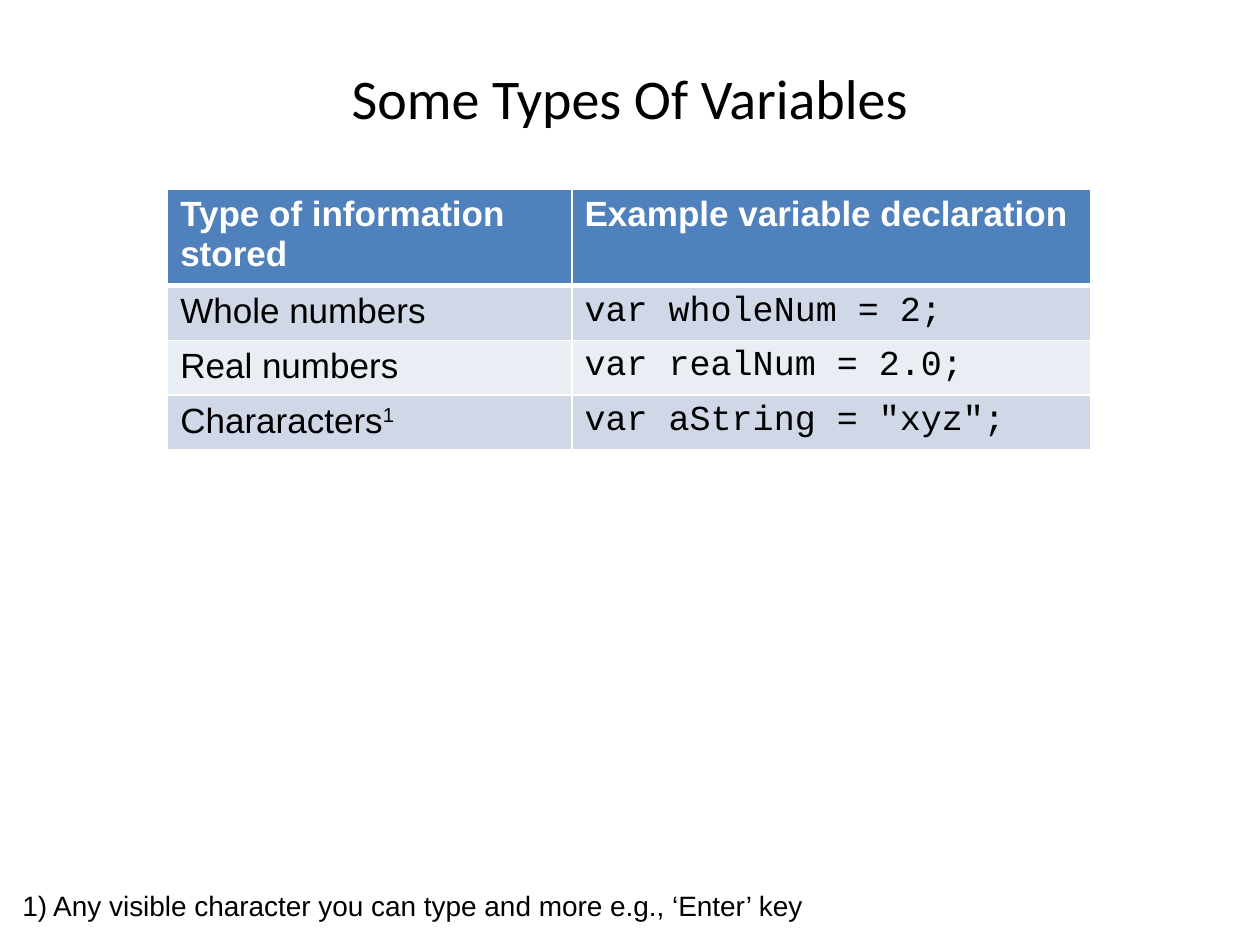
from dataclasses import dataclass

from lxml import etree
from pptx import Presentation
from pptx import util as u
from pptx.dml.color import RGBColor
from pptx.enum import text
from pptx.oxml import ns

BLACK = RGBColor(0x00, 0x00, 0x00)
WHITE = RGBColor(0xFF, 0xFF, 0xFF)
HEADER_BLUE = RGBColor(0x4F, 0x81, 0xBD)
BANDS = (RGBColor(0xD0, 0xD8, 0xE8), RGBColor(0xE9, 0xED, 0xF4))

TITLE = {"name": "Calibri", "size": u.Pt(32), "color": BLACK}
NOTE = {"name": "Arial", "size": u.Pt(16), "color": BLACK}
HEADER = {"name": "Arial", "size": u.Pt(20), "color": WHITE, "bold": True}
LABEL = {"name": "Arial", "size": u.Pt(20), "color": BLACK, "bold": False}
CODE = LABEL | {"name": "Courier New"}

COLUMN_WIDTHS = (u.Cm(8.15), u.Cm(10.46))
HEADER_HEIGHT, ROW_HEIGHT = u.Cm(1.8), u.Cm(1.05)
THIN, THICK = u.Pt(1), u.Pt(3)


@dataclass(frozen=True)
class VariableType:
    label: str
    example: str
    mark: str = ""


HEADINGS = ("Type of information stored", "Example variable declaration")
VARIABLE_TYPES = (
    VariableType("Whole numbers", "var wholeNum = 2;"),
    VariableType("Real numbers", "var realNum = 2.0;"),
    VariableType("Chararacters", 'var aString = "xyz";', mark="1"),
)


def add_span(para, words: str, style: dict):
    span = para.add_run()
    span.text = words
    for key, value in style.items():
        if key == "color":
            span.font.color.rgb = value
        else:
            setattr(span.font, key, value)
    return span


def add_text(page, left: float, top: float, width: float, height: float,
             words: str, style: dict, layout: dict, align=None) -> None:
    """Add a wrapped text box; the place is in centimetres."""
    box = page.shapes.add_textbox(*map(u.Cm, (left, top, width, height)))
    frame = box.text_frame
    for key, value in ({"word_wrap": True} | layout).items():
        setattr(frame, key, value)
    frame.paragraphs[0].alignment = align
    add_span(frame.paragraphs[0], words, style)


def format_cell(cell, fill: RGBColor, top: int, bottom: int) -> None:
    """Draw white borders, then fill; the schema wants them in that order."""
    properties = cell._tc.get_or_add_tcPr()
    widths = {"a:lnL": THIN, "a:lnR": THIN, "a:lnT": top, "a:lnB": bottom}
    for tag, width in widths.items():
        line = etree.SubElement(properties, ns.qn(tag), w=str(int(width)))
        solid = etree.SubElement(line, ns.qn("a:solidFill"))
        etree.SubElement(solid, ns.qn("a:srgbClr"), val=str(WHITE))
    cell.fill.solid()
    cell.fill.fore_color.rgb = fill


def add_variable_table(page) -> None:
    count = len(VARIABLE_TYPES)
    table = page.shapes.add_table(
        count + 1, len(HEADINGS), u.Cm(3.38), u.Cm(3.81),
        sum(COLUMN_WIDTHS), HEADER_HEIGHT + count * ROW_HEIGHT).table
    for column, width in zip(table.columns, COLUMN_WIDTHS):
        column.width = width
    for index, row in enumerate(table.rows):
        row.height = ROW_HEIGHT if index else HEADER_HEIGHT

    for column, heading in enumerate(HEADINGS):
        cell = table.cell(0, column)
        format_cell(cell, HEADER_BLUE, THIN, THICK)
        add_span(cell.text_frame.paragraphs[0], heading, HEADER)

    for index, kind in enumerate(VARIABLE_TYPES):
        label, example = (table.cell(index + 1, column) for column in range(2))
        for cell in (label, example):
            format_cell(cell, BANDS[index % 2], THIN if index else THICK, THIN)
        para = label.text_frame.paragraphs[0]
        add_span(para, kind.label, LABEL)
        if kind.mark:
            mark = add_span(para, kind.mark, LABEL)
            mark._r.get_or_add_rPr().set("baseline", "30000")
        add_span(example.text_frame.paragraphs[0], kind.example, CODE)


def main() -> None:
    deck = Presentation()
    deck.slide_width, deck.slide_height = u.Cm(25.4), u.Cm(19.05)
    page = deck.slides.add_slide(deck.slide_layouts[6])
    add_text(page, 1.27, 0.76, 22.86, 2.41, "Some Types Of Variables", TITLE,
             {"vertical_anchor": text.MSO_ANCHOR.MIDDLE}, text.PP_ALIGN.CENTER)
    add_variable_table(page)
    add_text(page, 0.2, 17.78, 24.97, 0.94,
             "1) Any visible character you can type and more e.g., ‘Enter’ key",
             NOTE, {"auto_size": text.MSO_AUTO_SIZE.SHAPE_TO_FIT_TEXT})
    deck.save("out.pptx")


if __name__ == "__main__":
    main()
